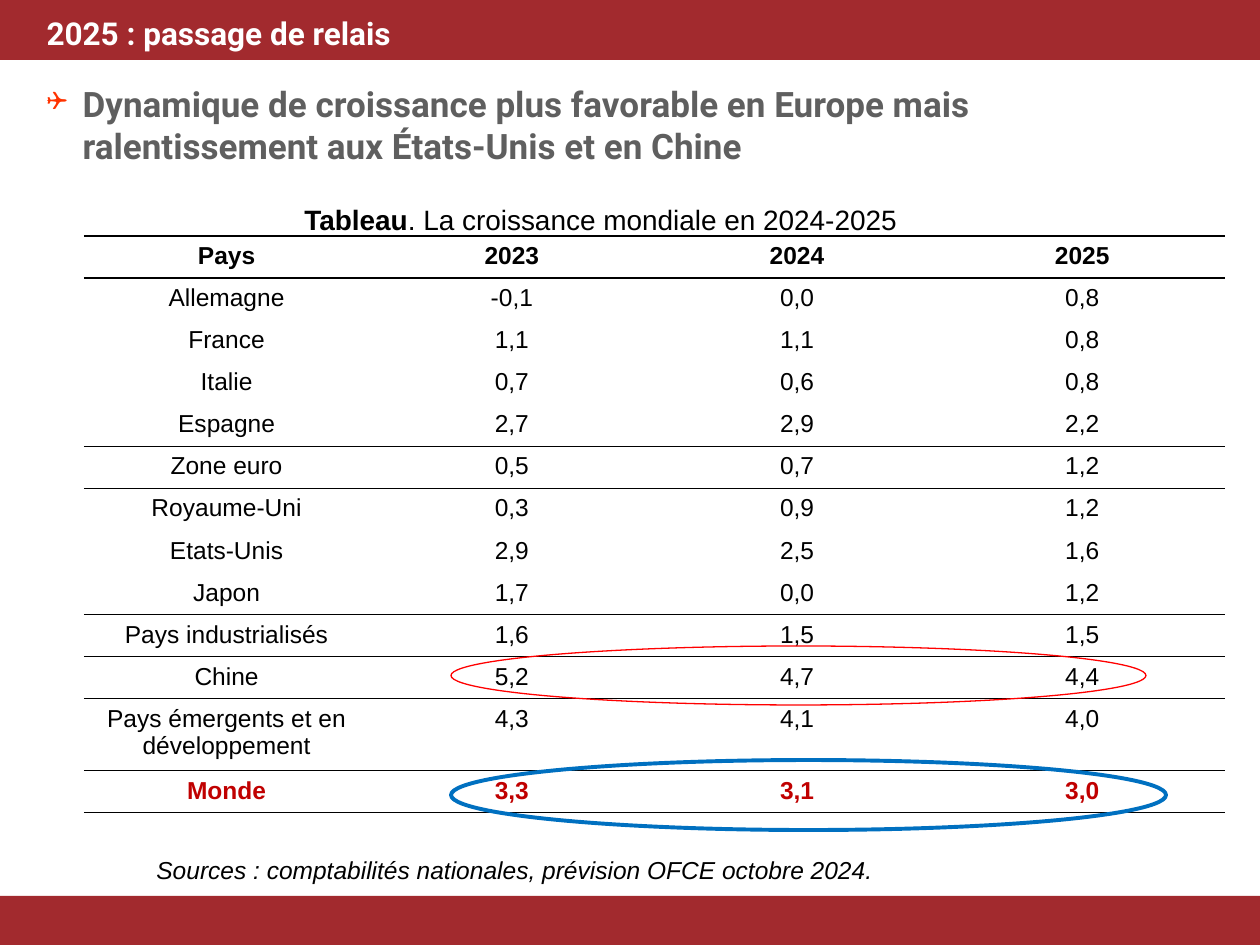
import pptx
import pptx.util
import pptx.dml.color
import pptx.enum.shapes
import pptx.enum.text
import pptx.oxml
import pptx.oxml.ns
import lxml.etree

# Content
TITLE = "2025 : passage de relais"
MESSAGE = ("Dynamique de croissance plus favorable en Europe mais "
           "ralentissement aux États-Unis et en Chine")
CAPTION = [("Tableau", True), (". La croissance mondiale en 2024-2025", False)]
SOURCES = "Sources : comptabilités nationales, prévision OFCE octobre 2024."
GROWTH = [
    ("Pays", "2023", "2024", "2025"),
    ("Allemagne", "-0,1", "0,0", "0,8"),
    ("France", "1,1", "1,1", "0,8"),
    ("Italie", "0,7", "0,6", "0,8"),
    ("Espagne", "2,7", "2,9", "2,2"),
    ("Zone euro", "0,5", "0,7", "1,2"),
    ("Royaume-Uni", "0,3", "0,9", "1,2"),
    ("Etats-Unis", "2,9", "2,5", "1,6"),
    ("Japon", "1,7", "0,0", "1,2"),
    ("Pays industrialisés", "1,6", "1,5", "1,5"),
    ("Chine", "5,2", "4,7", "4,4"),
    ("Pays émergents et en développement", "4,3", "4,1", "4,0"),
    ("Monde", "3,3", "3,1", "3,0"),
]
NO_RULE_BELOW = {"Allemagne", "France", "Italie", "Royaume-Uni", "Etats-Unis"}
TALL_ROW, WORLD_ROW = "Pays émergents et en développement", "Monde"

# Layout, in px at 126 to the inch
BARS = [(0, 0, 1260, 60), (0, 896, 1260, 49)]
HIGHLIGHTS = [((451, 646, 695, 59), "FF0000", 0.75),
              ((451, 760, 715, 70), "0070C0", 2.25)]
TABLE_LEFT, TABLE_TOP, TABLE_WIDTH = 84, 236, 1141
ROW_HEIGHT, TALL_HEIGHT = 42, 72
BAR_RED, GREY, BLACK, WORLD_RED = "A22A2E", "5F5F5F", "000000", "C00000"


def px(length):
    return pptx.util.Emu(length * 914400 // 126)


def colour(value):
    return pptx.dml.color.RGBColor.from_string(value)


def place(shape, left, top, width, height):
    shape.left, shape.top = px(left), px(top)
    shape.width, shape.height = px(width), px(height)


def style(font, name, size, value, bold=False, italic=False):
    font.name, font.size = name, pptx.util.Pt(size)
    font.bold, font.italic = bold, italic
    font.color.rgb = colour(value)


def add_shape(kind, box):
    shape = slide.shapes.add_shape(kind, *map(px, box))
    shape.shadow.inherit = False
    return shape


def set_rule(cell, index, side, visible):
    fill = (f'<a:solidFill><a:srgbClr val="{BLACK}"/></a:solidFill>'
            if visible else "<a:noFill/>")
    rule = pptx.oxml.parse_xml(
        f'<a:{side} {pptx.oxml.ns.nsdecls("a")} w="12700">{fill}</a:{side}>')
    cell._tc.get_or_add_tcPr().insert(index, rule)


presentation = pptx.Presentation()
presentation.slide_width, presentation.slide_height = px(1260), px(945)
slide = presentation.slides.add_slide(presentation.slide_layouts[1])
SHAPES = pptx.enum.shapes.MSO_SHAPE
ALIGN = pptx.enum.text.PP_ALIGN
ANCHOR = pptx.enum.text.MSO_ANCHOR
FIT = pptx.enum.text.MSO_AUTO_SIZE

# Bars at the top and bottom, behind everything
for box in BARS:
    bar = add_shape(SHAPES.RECTANGLE, box)
    bar.fill.solid()
    bar.fill.fore_color.rgb = colour(BAR_RED)
    bar.line.fill.background()
    slide.shapes._spTree.insert(2, bar._element)

# Title and message
title, message = slide.placeholders
place(title, 34, 0, 1211, 66)
place(message, 34, 76, 1171, 130)
for holder, text, size, value, anchor in (
        (title, TITLE, 18, "FFFFFF", ANCHOR.MIDDLE),
        (message, MESSAGE, 20, GREY, ANCHOR.TOP)):
    frame = holder.text_frame
    frame.text = text
    frame.auto_size, frame.vertical_anchor = FIT.NONE, anchor
    paragraph = frame.paragraphs[0]
    paragraph.alignment = ALIGN.LEFT
    paragraph.space_before = pptx.util.Pt(0)
    style(paragraph.runs[0].font, "Roboto", size, value, bold=True)

bullet = message.text_frame.paragraphs[0]._p.get_or_add_pPr()
bullet.set("marL", str(px(36)))
bullet.set("indent", str(-px(36)))
for tag, attributes in (("buClr", {}), ("buSzPct", {"val": "75000"}),
                        ("buFont", {"typeface": "Wingdings"}),
                        ("buChar", {"char": "❑"})):
    part = lxml.etree.SubElement(bullet, pptx.oxml.ns.qn(f"a:{tag}"), attributes)
    if tag == "buClr":
        lxml.etree.SubElement(part, pptx.oxml.ns.qn("a:srgbClr"), {"val": "FF3300"})

# Sources and table caption
sources = slide.shapes.add_textbox(*map(px, (144, 849, 843, 43))).text_frame
sources.word_wrap = True
sources.text = SOURCES
style(sources.paragraphs[0].runs[0].font, "Arial", 14, BLACK, italic=True)

caption = slide.shapes.add_textbox(*map(px, (292, 196, 625, 45))).text_frame
caption.word_wrap = False
caption.paragraphs[0].alignment = ALIGN.LEFT
for text, bold in CAPTION:
    run = caption.paragraphs[0].add_run()
    run.text = text
    style(run.font, "Arial", 16, BLACK, bold)

# Growth table
heights = [TALL_HEIGHT if row[0] == TALL_ROW else ROW_HEIGHT for row in GROWTH]
table = slide.shapes.add_table(
    len(GROWTH), len(GROWTH[0]), px(TABLE_LEFT), px(TABLE_TOP),
    px(TABLE_WIDTH), px(sum(heights))).table
table.first_row = table.horz_banding = False
rule_above = True
for r, values in enumerate(GROWTH):
    table.rows[r].height = px(heights[r])
    rule_below = values[0] not in NO_RULE_BELOW
    world = values[0] == WORLD_ROW
    for c, value in enumerate(values):
        cell = table.cell(r, c)
        cell.text = value
        cell.fill.background()
        paragraph = cell.text_frame.paragraphs[0]
        paragraph.alignment = ALIGN.CENTER
        style(paragraph.runs[0].font, "Arial", 14,
              WORLD_RED if world else BLACK, bold=world or r == 0)
        sides = (("lnL", False), ("lnR", False),
                 ("lnT", rule_above), ("lnB", rule_below))
        for index, (side, visible) in enumerate(sides):
            set_rule(cell, index, side, visible)
    rule_above = rule_below

# Ellipses around China and the world
for box, value, width in HIGHLIGHTS:
    highlight = add_shape(SHAPES.OVAL, box)
    highlight.fill.background()
    highlight.line.color.rgb = colour(value)
    highlight.line.width = pptx.util.Pt(width)

presentation.save("out.pptx")
